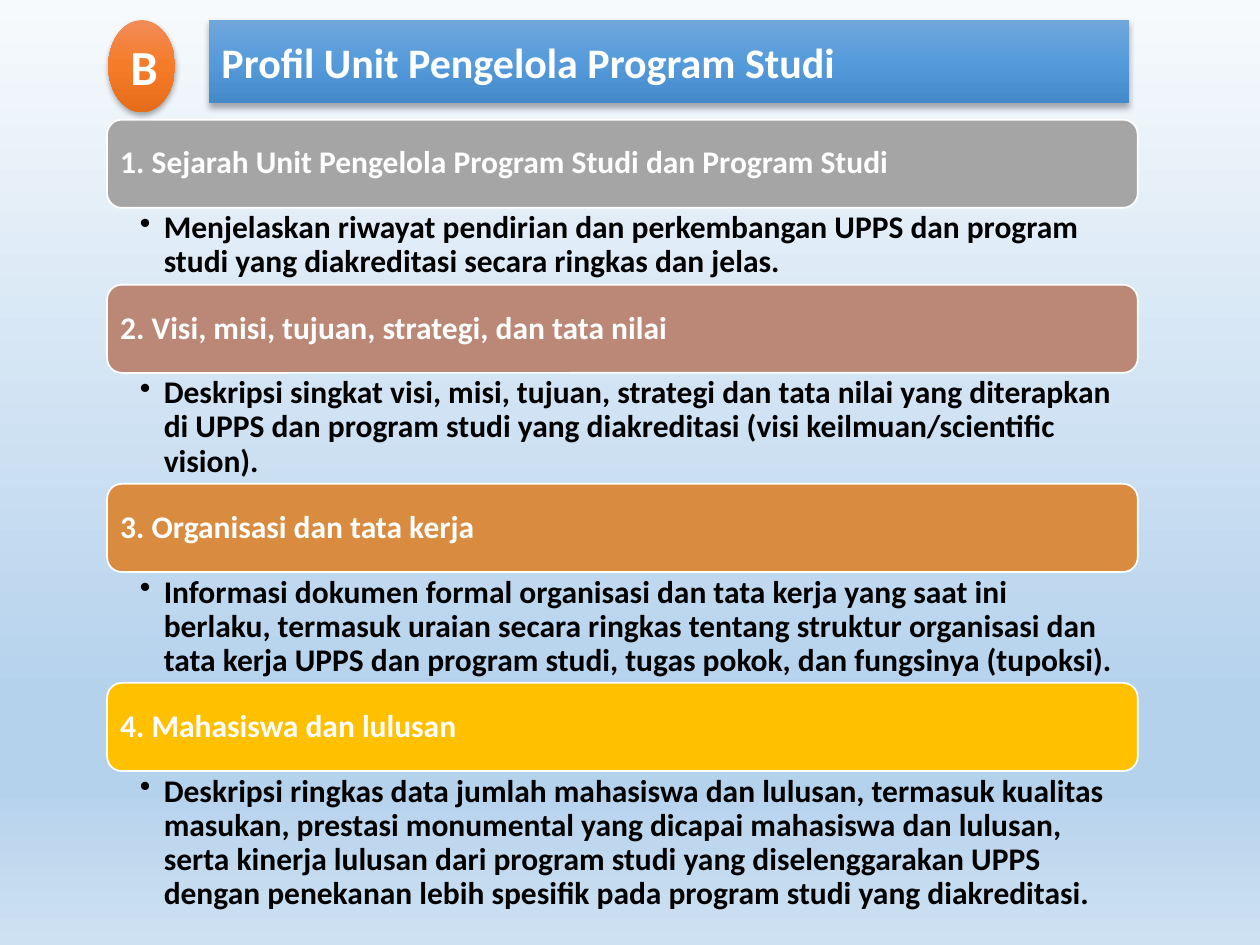
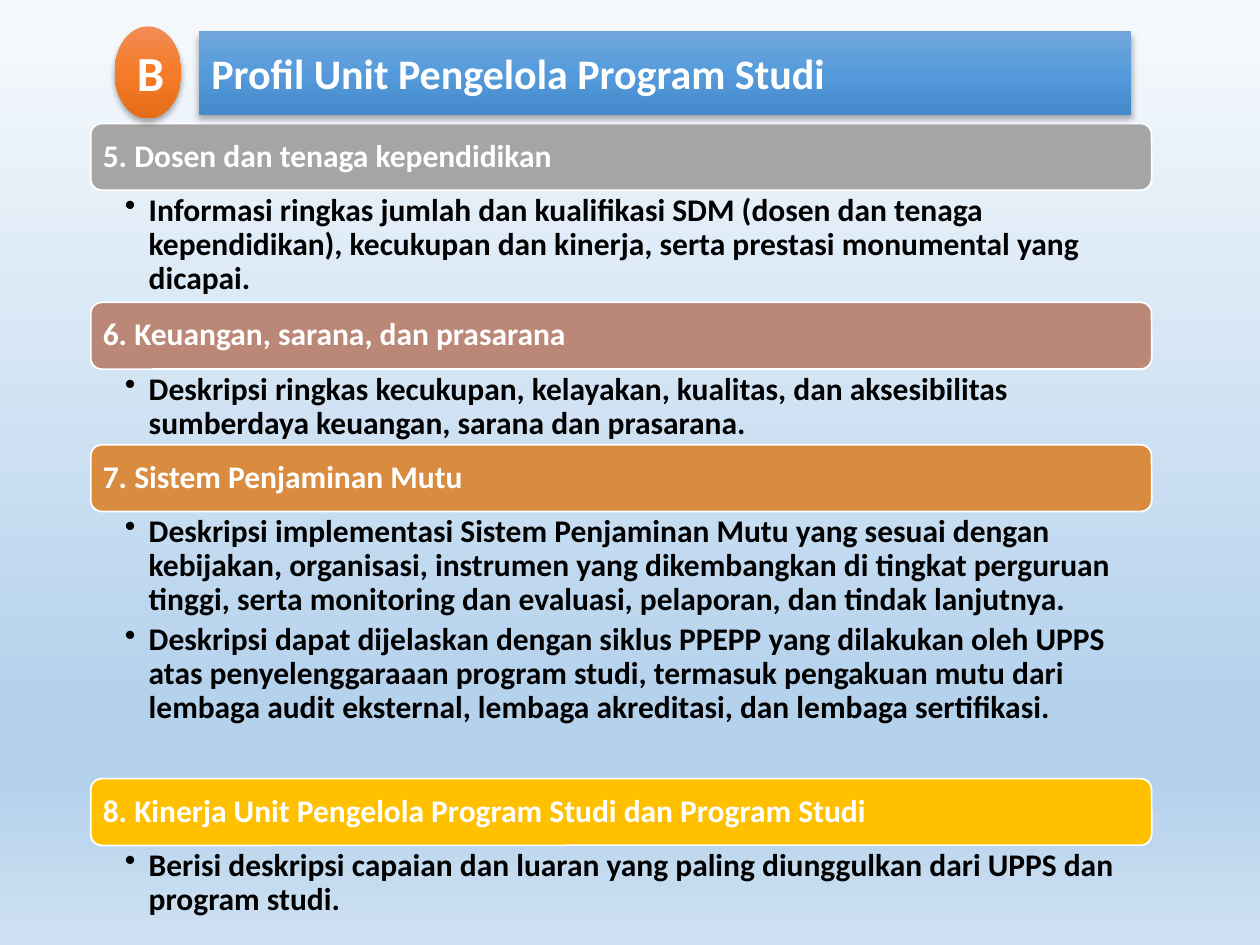
"""Build two slides that outline the profile of a study programme unit."""
import dataclasses
import typing

import lxml.etree
import pptx
import pptx.dml.color
import pptx.enum.shapes
import pptx.enum.text
import pptx.oxml.ns
import pptx.util

Inches = pptx.util.Inches
Pt = pptx.util.Pt
Kind = pptx.enum.shapes.MSO_SHAPE
Anchor = pptx.enum.text.MSO_ANCHOR
Align = pptx.enum.text.PP_ALIGN
Stops = tuple[tuple[int, str], ...]


@dataclasses.dataclass(frozen=True)
class Theme:
    font: str = "Calibri"
    white: str = "FFFFFF"
    black: str = "000000"
    bars: tuple[str, ...] = ("A5A5A5", "BB8776", "D98B3F", "FFC000")
    sky: Stops = ((0, "F7FAFD"), (74, "B5D2EC"), (83, "B5D2EC"), (100, "CEE1F2"))
    badge: Stops = ((0, "F18C57"), (50, "F67B28"), (100, "E56C19"))
    title: Stops = ((0, "71A6DB"), (50, "559BDB"), (100, "448ACA"))
    text_size: int = 18
    title_size: int = 24
    badge_size: int = 28


@dataclasses.dataclass(frozen=True)
class Box:
    left: float
    top: float
    width: float
    height: float

    def place(self) -> tuple[int, ...]:
        return tuple(Inches(v) for v in dataclasses.astuple(self))


@dataclasses.dataclass(frozen=True)
class Topic:
    head: str
    height: float
    points: tuple[str, ...]


@dataclasses.dataclass(frozen=True)
class Page:
    badge: Box
    title: Box
    bar: Box
    inset: float
    topics: tuple[Topic, ...]


THEME = Theme()
BAR_PAD = {f"margin_{side}": Inches(0.07) for side in ("left", "right", "top", "bottom")}
PAGES = (
    Page(Box(0.86, 0.16, 0.53, 0.73), Box(1.66, 0.16, 7.3, 0.66), Box(0.85, 0.95, 8.18, 0.7), 0.26, (
        Topic("1. Sejarah Unit Pengelola Program Studi dan Program Studi", 0.61, (
            "Menjelaskan riwayat pendirian dan perkembangan UPPS dan program studi yang "
            "diakreditasi secara ringkas dan jelas.",)),
        Topic("2. Visi, misi, tujuan, strategi, dan tata nilai", 0.88, (
            "Deskripsi singkat visi, misi, tujuan, strategi dan tata nilai yang diterapkan di UPPS "
            "dan program studi yang diakreditasi (visi keilmuan/scientific vision).",)),
        Topic("3. Organisasi dan tata kerja", 0.88, (
            "Informasi dokumen formal organisasi dan tata kerja yang saat ini berlaku, termasuk "
            "uraian secara ringkas tentang struktur organisasi dan tata kerja UPPS dan program "
            "studi, tugas pokok, dan fungsinya (tupoksi).",)),
        Topic("4. Mahasiswa dan lulusan", 1.15, (
            "Deskripsi ringkas data jumlah mahasiswa dan lulusan, termasuk kualitas masukan, "
            "prestasi monumental yang dicapai mahasiswa dan lulusan, serta kinerja lulusan dari "
            "program studi yang diselenggarakan UPPS dengan penekanan lebih spesifik pada program "
            "studi yang diakreditasi.",)),
    )),
    Page(Box(0.91, 0.21, 0.53, 0.73), Box(1.58, 0.25, 7.4, 0.66), Box(0.72, 0.98, 8.42, 0.53), 0.27, (
        Topic("5. Dosen dan tenaga kependidikan", 0.89, (
            "Informasi ringkas jumlah dan kualifikasi SDM (dosen dan tenaga kependidikan), "
            "kecukupan dan kinerja, serta prestasi monumental yang dicapai.",)),
        Topic("6. Keuangan, sarana, dan prasarana", 0.6, (
            "Deskripsi ringkas kecukupan, kelayakan, kualitas, dan aksesibilitas sumberdaya "
            "keuangan, sarana dan prasarana.",)),
        Topic("7. Sistem Penjaminan Mutu", 2.12, (
            "Deskripsi implementasi Sistem Penjaminan Mutu yang sesuai dengan kebijakan, "
            "organisasi, instrumen yang dikembangkan di tingkat perguruan tinggi, serta monitoring "
            "dan evaluasi, pelaporan, dan tindak lanjutnya.",
            "Deskripsi dapat dijelaskan dengan siklus PPEPP yang dilakukan oleh UPPS atas "
            "penyelenggaraaan program studi, termasuk pengakuan mutu dari lembaga audit eksternal, "
            "lembaga akreditasi, dan lembaga sertifikasi.")),
        Topic("8. Kinerja Unit Pengelola Program Studi dan Program Studi", 0.6, (
            "Berisi deskripsi capaian dan luaran yang paling diunggulkan dari UPPS dan program "
            "studi.",)),
    )),
)


def tint(code: str) -> pptx.dml.color.RGBColor:
    return pptx.dml.color.RGBColor.from_string(code)


def apply(target: typing.Any, values: dict[str, typing.Any]) -> None:
    for name, value in values.items():
        setattr(target, name, value)


def add_node(root: typing.Any, tag: str, **values: typing.Any) -> typing.Any:
    return lxml.etree.SubElement(
        root, pptx.oxml.ns.qn(tag), {name: str(value) for name, value in values.items()})


def blend(owner: typing.Any, fill: typing.Any, stops: Stops) -> None:
    fill.gradient()
    fill.gradient_angle = 270
    nodes = next(owner.element.iter(pptx.oxml.ns.qn("a:gsLst")))
    for node in list(nodes):
        nodes.remove(node)
    for spot, code in stops:
        add_node(add_node(nodes, "a:gs", pos=spot * 1000), "a:srgbClr", val=code)


def cast(shape: typing.Any) -> None:
    effects = next(shape.element.iter(pptx.oxml.ns.qn("a:effectLst")))
    shade = add_node(effects, "a:outerShdw", blurRad=Pt(3.5), dist=Pt(2.2),
                     dir=5400000, algn="ctr", rotWithShape=0)
    add_node(add_node(shade, "a:srgbClr", val=THEME.black), "a:alpha", val=32000)


def write(shape: typing.Any, lines: tuple[str, ...], size: int, code: str,
          frame: dict[str, typing.Any], style: dict[str, typing.Any]) -> None:
    text = shape.text_frame
    apply(text, {"word_wrap": True, **frame})
    text.text = "\n".join(lines)
    for para in text.paragraphs:
        apply(para, {"alignment": Align.LEFT, **style})
        font = para.runs[0].font
        apply(font, {"name": THEME.font, "size": Pt(size), "bold": True})
        font.color.rgb = tint(code)


def add_form(slide: typing.Any, kind: typing.Any, box: Box) -> typing.Any:
    shape = slide.shapes.add_shape(kind, *box.place())
    shape.shadow.inherit = False
    return shape


def draw_glow(slide: typing.Any, kind: typing.Any, box: Box, stops: Stops,
              text: str, size: int, align: typing.Any) -> None:
    shape = add_form(slide, kind, box)
    blend(shape, shape.fill, stops)
    shape.line.fill.background()
    cast(shape)
    write(shape, (text,), size, THEME.white,
          {"vertical_anchor": Anchor.MIDDLE}, {"alignment": align})


def draw_bar(slide: typing.Any, box: Box, code: str, head: str) -> None:
    shape = add_form(slide, Kind.ROUNDED_RECTANGLE, box)
    shape.fill.solid()
    shape.fill.fore_color.rgb = tint(code)
    shape.line.color.rgb = tint(THEME.white)
    shape.line.width = Pt(1)
    write(shape, (head,), THEME.text_size, THEME.white,
          {"vertical_anchor": Anchor.MIDDLE, **BAR_PAD}, {"line_spacing": 0.9})


def draw_points(slide: typing.Any, box: Box, inset: float, points: tuple[str, ...]) -> None:
    shape = slide.shapes.add_textbox(*box.place())
    frame = {"margin_left": Inches(inset), "margin_right": Inches(0.14),
             "margin_top": Inches(0.03), "margin_bottom": Inches(0.03)}
    write(shape, points, THEME.text_size, THEME.black, frame,
          {"level": 1, "line_spacing": 0.9, "space_after": Pt(3.6)})
    for node in shape.element.iter(pptx.oxml.ns.qn("a:pPr")):
        node.set("marL", str(Inches(0.19)))
        node.set("indent", str(-Inches(0.19)))
        add_node(node, "a:buChar", char="•")


def draw_page(slide: typing.Any, page: Page) -> None:
    blend(slide, slide.background.fill, THEME.sky)
    bar = page.bar
    for topic, code in zip(page.topics, THEME.bars):
        draw_bar(slide, bar, code, topic.head)
        body = dataclasses.replace(bar, top=bar.top + bar.height, height=topic.height)
        draw_points(slide, body, page.inset, topic.points)
        bar = dataclasses.replace(bar, top=body.top + body.height)
    draw_glow(slide, Kind.OVAL, page.badge, THEME.badge, "B", THEME.badge_size, Align.CENTER)
    draw_glow(slide, Kind.RECTANGLE, page.title, THEME.title,
              "Profil Unit Pengelola Program Studi", THEME.title_size, Align.LEFT)


def main() -> None:
    deck = pptx.Presentation()
    apply(deck, {"slide_width": Inches(10), "slide_height": Inches(7.5)})
    for page in PAGES:
        draw_page(deck.slides.add_slide(deck.slide_layouts[6]), page)
    deck.save("out.pptx")


if __name__ == "__main__":
    main()
